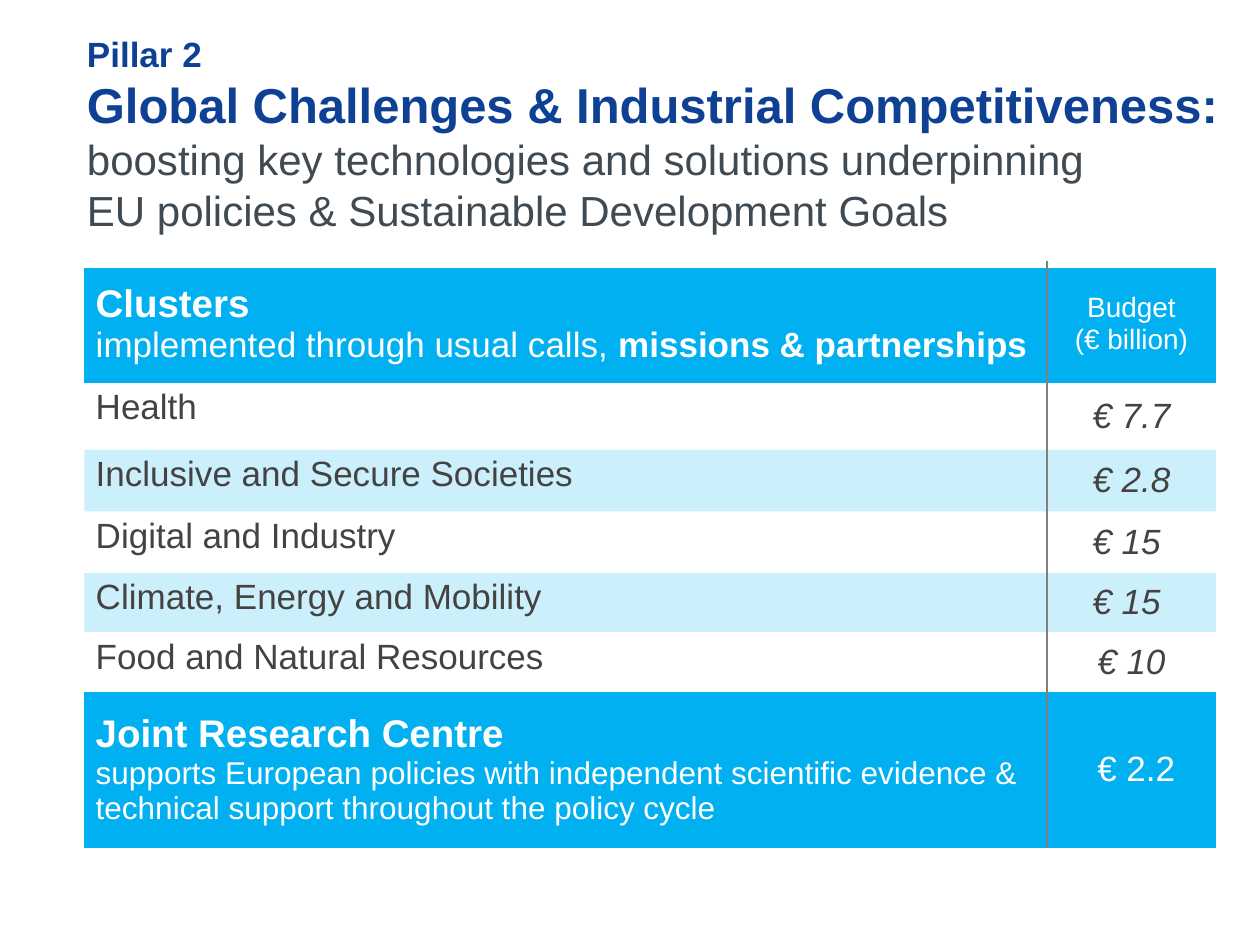
from dataclasses import dataclass

from lxml import etree
from pptx import Presentation
from pptx.dml.color import RGBColor
from pptx.enum import text
from pptx.oxml import ns
from pptx.util import Inches, Pt

WIDTH, HEIGHT = 10, 7.5
FONT = "Arial"
NAVY, SLATE, BODY = "0E4194", "404A52", "444342"
BLUE, WHITE, GREY = "00B0F0", "FFFFFF", "808080"
NO_STYLE = "{2D5ABB26-0587-4C30-8999-92F81FD0307C}"
COLUMNS = (7.64, 1.34)


@dataclass
class Run:
    words: str
    size: float
    color: str = WHITE
    bold: bool = False
    italic: bool = False


@dataclass
class Row:
    height: float
    label: list[list[Run]]
    budget: list[list[Run]]
    fill: str | None = None
    alpha: int = 100
    label_anchor: text.MSO_ANCHOR = text.MSO_ANCHOR.MIDDLE


def rgb(color: str) -> RGBColor:
    return RGBColor.from_string(color)


def add_run(paragraph, part: Run) -> None:
    run = paragraph.add_run()
    run.text = part.words
    formats = {"name": FONT, "size": Pt(part.size), "bold": part.bold, "italic": part.italic}
    for name, value in formats.items():
        setattr(run.font, name, value)
    run.font.color.rgb = rgb(part.color)


def cluster(height: float, name: str, budget: str, fill: str | None = None,
            alpha: int = 100) -> Row:
    return Row(height, [[Run(name, 20, BODY)]], [[Run(budget, 20, BODY, italic=True)]],
               fill, alpha, text.MSO_ANCHOR.TOP)


def set_border(cell, side: str, color: str, width: float) -> None:
    properties = cell._tc.get_or_add_tcPr()
    line = etree.Element(ns.qn(f"a:ln{side}"), w=str(Pt(width)))
    solid = etree.SubElement(line, ns.qn("a:solidFill"))
    etree.SubElement(solid, ns.qn("a:srgbClr"), val=color)
    position = sum(child.tag in (ns.qn("a:lnL"), ns.qn("a:lnR")) for child in properties)
    properties.insert(position, line)


def set_fill(cell, color: str | None, alpha: int) -> None:
    if color is None:
        cell.fill.background()
        return
    cell.fill.solid()
    cell.fill.fore_color.rgb = rgb(color)
    if alpha < 100:
        tone = cell._tc.tcPr.find(".//" + ns.qn("a:srgbClr"))
        etree.SubElement(tone, ns.qn("a:alpha"), val=str(alpha * 1000))


def fill_cell(cell, paragraphs: list[list[Run]], anchor, alignment) -> None:
    margins = {"margin_left": 0.09, "margin_right": 0.09,
               "margin_top": 0.04, "margin_bottom": 0.04}
    for name, value in margins.items():
        setattr(cell, name, Inches(value))
    cell.vertical_anchor = anchor
    for index, runs in enumerate(paragraphs):
        frame = cell.text_frame
        paragraph = frame.add_paragraph() if index else frame.paragraphs[0]
        paragraph.alignment = alignment
        for part in runs:
            add_run(paragraph, part)


def add_title(slide) -> None:
    title = slide.shapes.title
    place = {"left": 0.59, "top": 0.21, "width": 9.33, "height": 0.79}
    for name, value in place.items():
        setattr(title, name, Inches(value))
    frame = title.text_frame
    frame.word_wrap = True
    frame.auto_size = text.MSO_AUTO_SIZE.NONE
    frame.vertical_anchor = text.MSO_ANCHOR.TOP
    paragraph = frame.paragraphs[0]
    paragraph.alignment = text.PP_ALIGN.LEFT
    lines = [
        Run("Pillar 2", 20, NAVY, bold=True),
        Run("Global Challenges & Industrial Competitiveness:", 28, NAVY, bold=True),
        Run("boosting key technologies and solutions underpinning", 24, SLATE),
        Run("EU policies & Sustainable Development Goals", 24, SLATE),
    ]
    for index, line in enumerate(lines):
        if index:
            paragraph.add_line_break()
        add_run(paragraph, line)


def add_budget_table(slide, rows: list[Row]) -> None:
    frame = slide.shapes.add_table(
        len(rows), len(COLUMNS), Inches(0.67), Inches(2.1),
        Inches(sum(COLUMNS)), Inches(sum(row.height for row in rows)))
    table = frame.table
    table.first_row = table.horz_banding = False
    table._tbl.tblPr.find(ns.qn("a:tableStyleId")).text = NO_STYLE
    for column, width in zip(table.columns, COLUMNS):
        column.width = Inches(width)

    for index, row in enumerate(rows):
        table.rows[index].height = Inches(row.height)
        label, budget = table.cell(index, 0), table.cell(index, 1)
        fill_cell(label, row.label, row.label_anchor, text.PP_ALIGN.LEFT)
        fill_cell(budget, row.budget, text.MSO_ANCHOR.MIDDLE, text.PP_ALIGN.CENTER)
        for cell, side in ((label, "R"), (budget, "L")):
            set_fill(cell, row.fill, row.alpha)
            set_border(cell, side, GREY, 1)
            if index == 0:
                set_border(cell, "T", WHITE, 4.5)


def main() -> None:
    presentation = Presentation()
    presentation.slide_width, presentation.slide_height = Inches(WIDTH), Inches(HEIGHT)
    slide = presentation.slides.add_slide(presentation.slide_layouts[5])
    add_title(slide)

    # Heading row, five clusters, closing row
    add_budget_table(slide, [
        Row(0.94,
            [[Run("Clusters", 22, bold=True)],
             [Run("implemented through usual calls, ", 20),
              Run("missions & partnerships", 20, bold=True)]],
            [[Run("Budget", 16)], [Run("(€ billion)", 16)]], BLUE),
        cluster(0.53, "Health", "€ 7.7"),
        cluster(0.49, "Inclusive and Secure Societies", "€ 2.8", BLUE, 20),
        cluster(0.49, "Digital and Industry", "€ 15 "),
        cluster(0.47, "Climate, Energy and Mobility", "€ 15 ", BLUE, 20),
        cluster(0.47, "Food and Natural Resources", "€ 10", WHITE),
        Row(1.24,
            [[Run("Joint Research Centre", 22, bold=True)],
             [Run("supports European policies with independent scientific evidence & "
                  "technical support throughout the policy cycle", 18)]],
            [[Run(" € 2.2", 20)]], BLUE),
    ])
    presentation.save("out.pptx")


if __name__ == "__main__":
    main()
